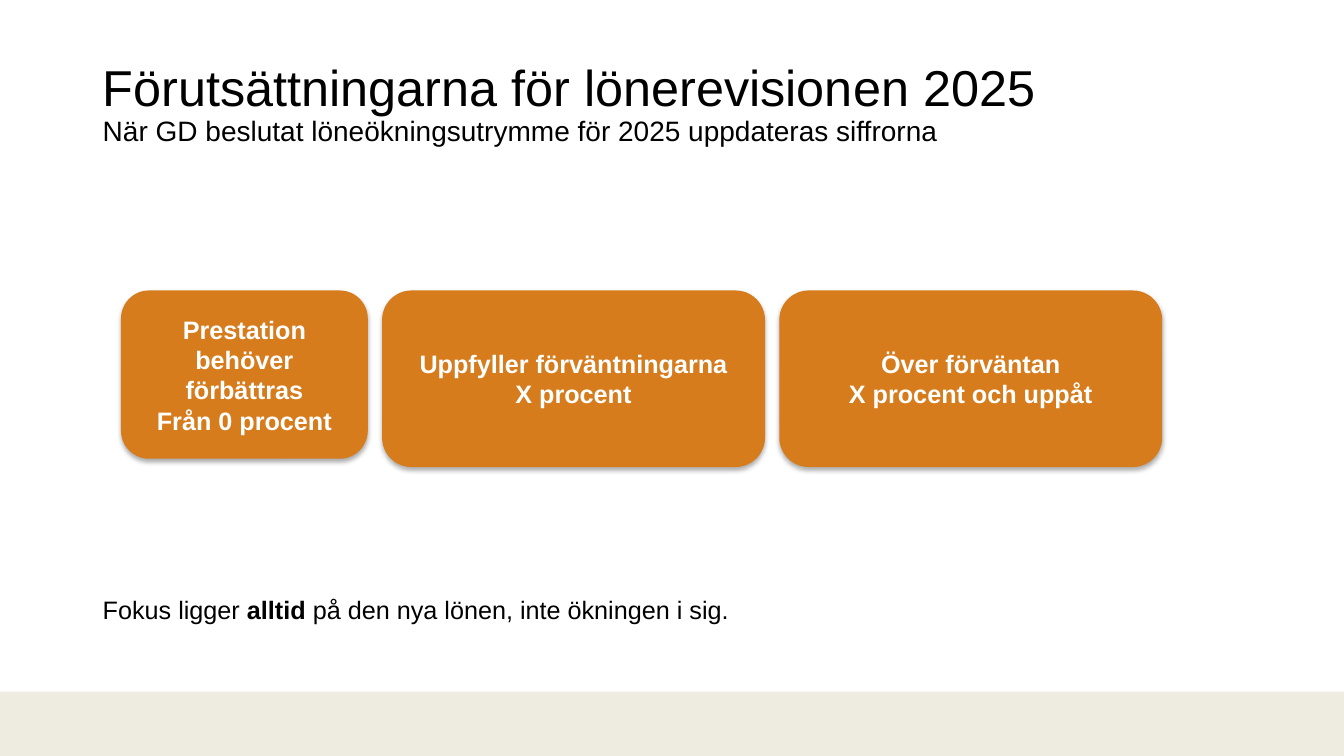
from lxml import etree
from pptx import Presentation
from pptx.dml.color import RGBColor
from pptx.enum.shapes import MSO_SHAPE as SHAPE
from pptx.enum.text import MSO_ANCHOR as ANCHOR, MSO_AUTO_SIZE as AUTO, PP_ALIGN as ALIGN
from pptx.oxml.ns import qn
from pptx.util import Cm, Pt

TITLE = [("Förutsättningarna för lönerevisionen 2025", 36),
         ("När GD beslutat löneökningsutrymme för 2025 uppdateras siffrorna", 20)]
LEVELS = [("Prestation behöver förbättras\nFrån 0 procent", 6.22, 4.24),
          ("Uppfyller förväntningarna\nX procent", 9.65, 4.45),
          ("Över förväntan\nX procent och uppåt", 9.65, 4.45)]
FOCUS = [("Fokus ligger ", False), ("alltid", True),
         (" på den nya lönen, inte ökningen i sig.", False)]
BLACK, WHITE, ORANGE, BEIGE = "000000", "FFFFFF", "D67C1C", "EEECE1"
WIDTH, HEIGHT, FOOTER = 33.87, 19.05, 1.62
MARGIN, LEVEL_LEFT, LEVEL_TOP, LEVEL_GAP = 2.34, 3.05, 7.32, 0.36


def style(r, size, color, bold=False):
    r.font.name = "Arial"
    r.font.size = Pt(size)
    r.font.bold = bold
    r.font.color.rgb = RGBColor.from_string(color)


def add_block(s, shape, x, y, w, h, color):
    sp = s.shapes.add_shape(shape, Cm(x), Cm(y), Cm(w), Cm(h))
    sp.fill.solid()
    sp.fill.fore_color.rgb = RGBColor.from_string(color)
    sp.line.fill.background()
    sp.shadow.inherit = False
    return sp


def add_shadow(sp):
    effects = sp._element.spPr.find(qn("a:effectLst"))
    shadow = etree.SubElement(effects, qn("a:outerShdw"), blurRad=str(Pt(3.5)),
                              dist=str(Pt(2.2)), dir="5400000", rotWithShape="0")
    color = etree.SubElement(shadow, qn("a:srgbClr"), val=BLACK)
    etree.SubElement(color, qn("a:alpha"), val="32000")


def add_title(s):
    tf = s.shapes.add_textbox(Cm(MARGIN), Cm(1.47), Cm(29.21), Cm(3.68)).text_frame
    tf.word_wrap = True
    p = tf.paragraphs[0]
    p.line_spacing = 0.9
    for i, (text, size) in enumerate(TITLE):
        if i:
            p.add_line_break()
        r = p.add_run()
        r.text = text
        style(r, size, BLACK)


def add_levels(s):
    x = LEVEL_LEFT
    for text, w, h in LEVELS:
        sp = add_block(s, SHAPE.ROUNDED_RECTANGLE, x, LEVEL_TOP, w, h, ORANGE)
        add_shadow(sp)
        tf = sp.text_frame
        tf.word_wrap = True
        tf.vertical_anchor = ANCHOR.MIDDLE
        tf.text = text
        for p in tf.paragraphs:
            p.alignment = ALIGN.CENTER
            style(p.runs[0], 18, WHITE, True)
        x += w + LEVEL_GAP


def add_focus(s):
    tf = s.shapes.add_textbox(Cm(MARGIN), Cm(14.86), Cm(16.61), Cm(1.02)).text_frame
    tf.word_wrap = False
    tf.auto_size = AUTO.SHAPE_TO_FIT_TEXT
    for text, bold in FOCUS:
        r = tf.paragraphs[0].add_run()
        r.text = text
        style(r, 18, BLACK, bold)


def main():
    """Build the salary review slide."""
    prs = Presentation()
    prs.slide_width, prs.slide_height = Cm(WIDTH), Cm(HEIGHT)
    s = prs.slides.add_slide(prs.slide_layouts[6])
    add_block(s, SHAPE.RECTANGLE, 0, HEIGHT - FOOTER, WIDTH, FOOTER, BEIGE)
    add_title(s)
    add_levels(s)
    add_focus(s)
    prs.save("out.pptx")


if __name__ == "__main__":
    main()
